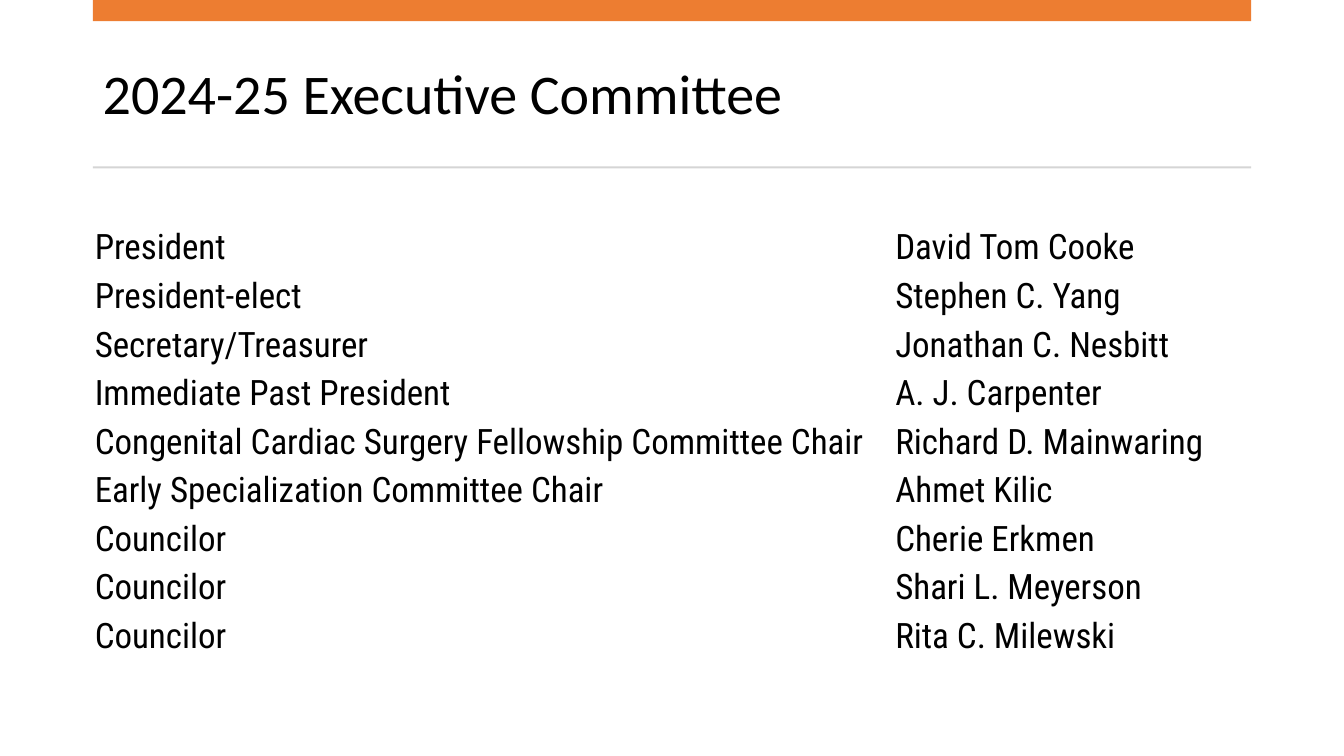
from pptx import Presentation
from pptx.dml.color import RGBColor
from pptx.enum.shapes import MSO_SHAPE
from pptx.enum.text import MSO_ANCHOR
from pptx.util import Inches, Pt

BLACK = RGBColor(0x00, 0x00, 0x00)
ORANGE = RGBColor(0xED, 0x7D, 0x31)
GREY = RGBColor(0xD5, 0xD5, 0xD5)

TITLE_FONT = {"name": "Calibri", "size": Pt(40)}
TABLE_FONT = {"name": "Roboto Condensed", "size": Pt(25)}
CELL_FORMAT = {
    "vertical_anchor": MSO_ANCHOR.MIDDLE,
    "margin_left": Inches(0.02),
    "margin_right": Inches(0.02),
    "margin_top": Inches(0.02),
    "margin_bottom": 0,
}

LEFT, WIDTH = 0.92, 11.49
NAME_COLUMN = 3.55

COMMITTEE = [
    ("President", "David Tom Cooke"),
    ("President-elect", "Stephen C. Yang"),
    ("Secretary/Treasurer", "Jonathan C. Nesbitt"),
    ("Immediate Past President", "A. J. Carpenter"),
    ("Congenital Cardiac Surgery Fellowship Committee Chair", "Richard D. Mainwaring"),
    ("Early Specialization Committee Chair", "Ahmet Kilic"),
    ("Councilor", "Cherie Erkmen"),
    ("Councilor", "Shari L. Meyerson"),
    ("Councilor", "Rita C. Milewski"),
]


def set_format(target, values):
    for name, value in values.items():
        setattr(target, name, value)


def write(para, text, font):
    span = para.add_run()
    span.text = text
    set_format(span.font, font)
    span.font.color.rgb = BLACK


def add_bar(page, left, top, width, height, color):
    bar = page.shapes.add_shape(
        MSO_SHAPE.RECTANGLE, Inches(left), Inches(top), Inches(width), Inches(height))
    bar.shadow.inherit = False
    bar.fill.solid()
    bar.fill.fore_color.rgb = color
    bar.line.fill.background()


def add_title(page, left, top, width, height, text):
    box = page.shapes.add_textbox(
        Inches(left), Inches(top), Inches(width), Inches(height))
    set_format(box.text_frame, {"word_wrap": True, "vertical_anchor": MSO_ANCHOR.MIDDLE})
    para = box.text_frame.paragraphs[0]
    para.line_spacing = 0.9
    write(para, text, TITLE_FONT)


def add_roster(page, left, top, width, height, members):
    table = page.shapes.add_table(
        len(members), 2, Inches(left), Inches(top), Inches(width), Inches(height)).table
    set_format(table, {"first_row": False, "horz_banding": False})
    table.columns[0].width = Inches(width - NAME_COLUMN)
    table.columns[1].width = Inches(NAME_COLUMN)
    for row, member in enumerate(members):
        for column, text in enumerate(member):
            cell = table.cell(row, column)
            cell.fill.background()
            set_format(cell, CELL_FORMAT)
            write(cell.text_frame.paragraphs[0], text, TABLE_FONT)


def main():
    deck = Presentation()
    set_format(deck, {"slide_width": Inches(13.33), "slide_height": Inches(7.5)})
    page = deck.slides.add_slide(deck.slide_layouts[6])

    # Header: title between the orange band and the grey rule
    add_title(page, LEFT, 0.37, WIDTH, 1.18, "2024-25 Executive Committee")
    add_bar(page, LEFT, 0, WIDTH, 0.21, ORANGE)
    add_bar(page, LEFT, 1.65, WIDTH, 0.02, GREY)

    # Offices and their holders
    add_roster(page, LEFT, 2.21, WIDTH, 4.34, COMMITTEE)

    deck.save("out.pptx")


if __name__ == "__main__":
    main()
